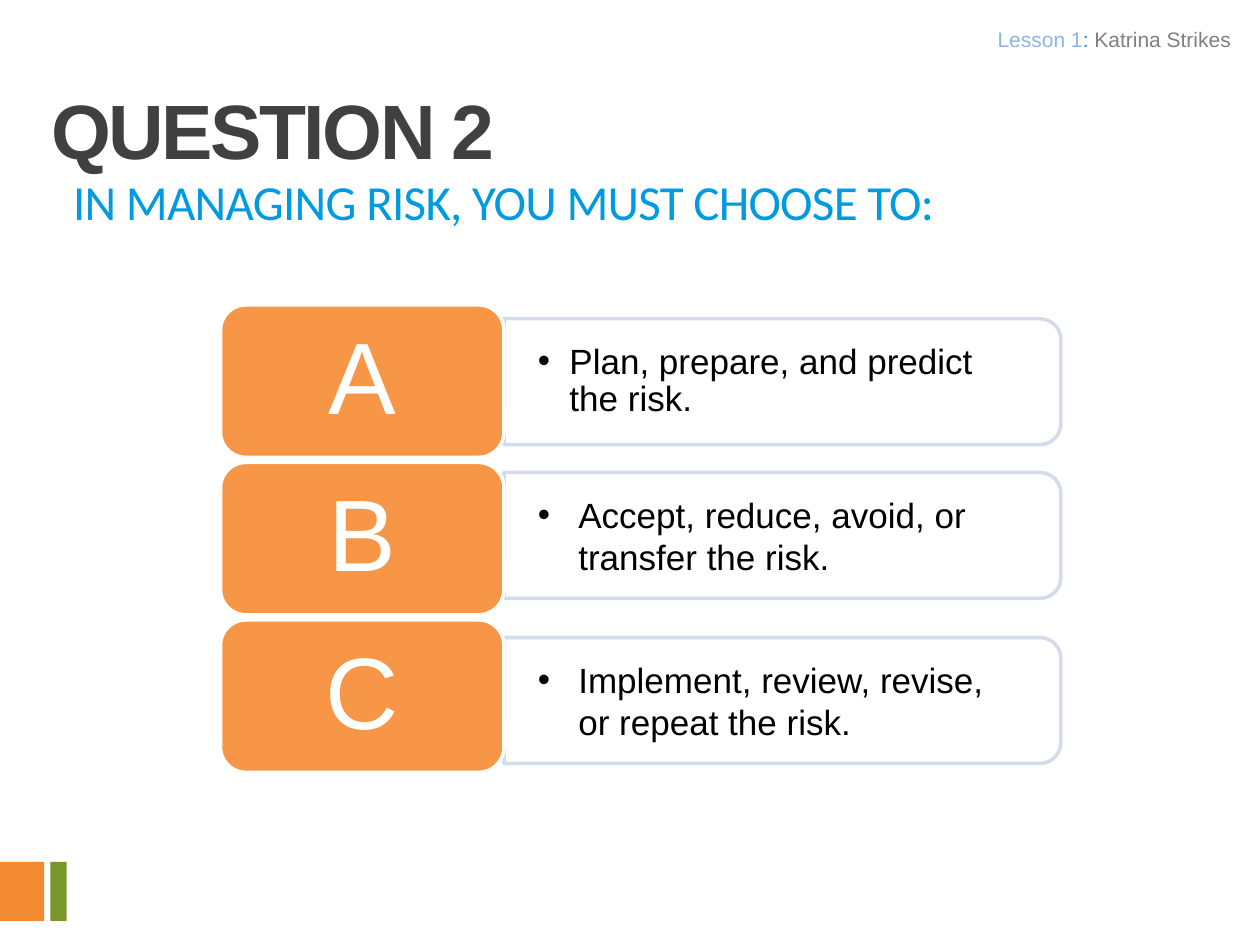
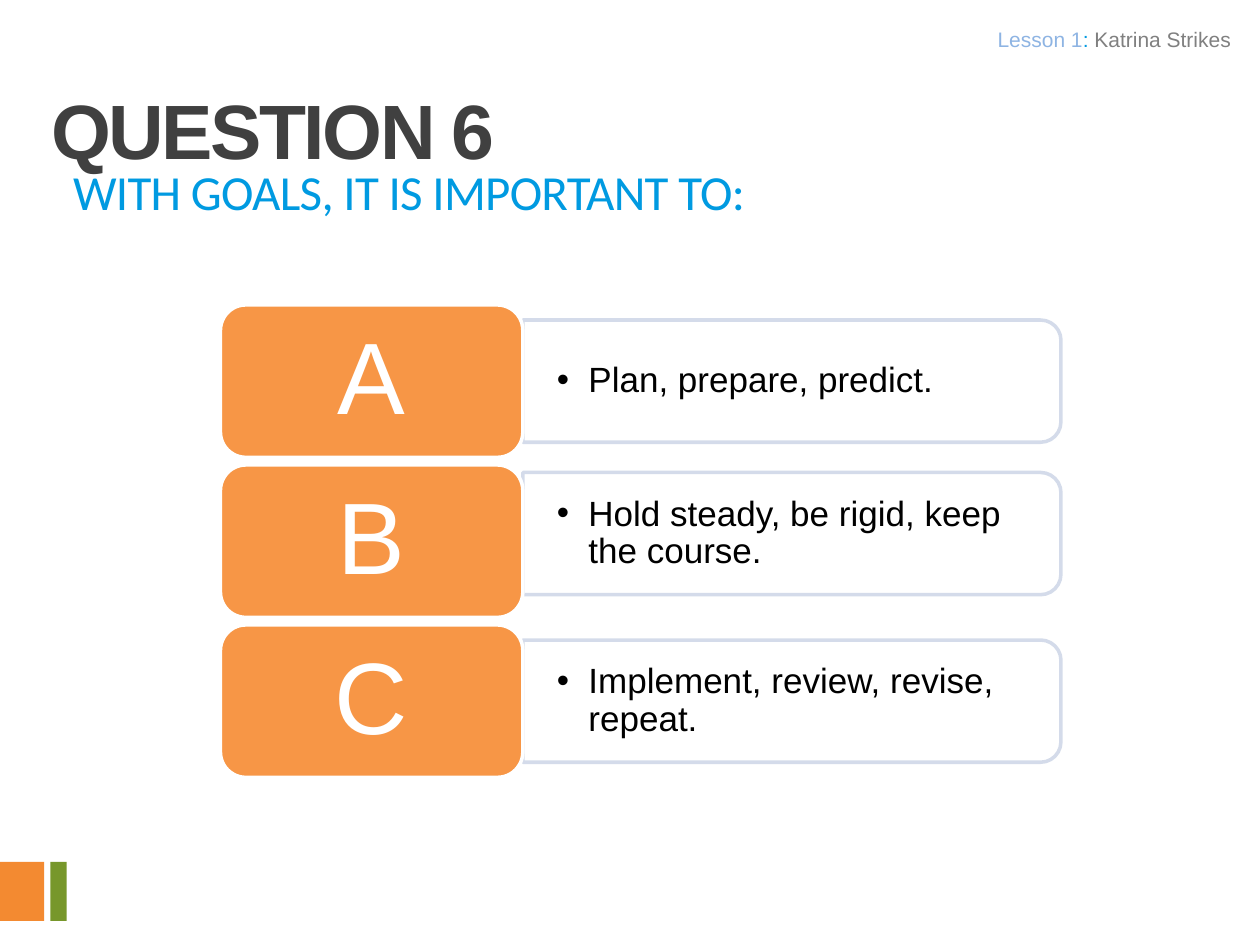
from lxml import etree
from pptx import Presentation
from pptx.dml.color import RGBColor
from pptx.enum.shapes import MSO_SHAPE
from pptx.enum.text import MSO_ANCHOR, MSO_AUTO_SIZE, PP_ALIGN
from pptx.oxml.ns import qn
from pptx.util import Inches, Pt

RECTANGLE = MSO_SHAPE.RECTANGLE
ROUNDED = MSO_SHAPE.ROUNDED_RECTANGLE
ROUNDED_TOP = MSO_SHAPE.ROUND_2_SAME_RECTANGLE
TOP, MIDDLE = MSO_ANCHOR.TOP, MSO_ANCHOR.MIDDLE
LEFT, CENTER, RIGHT = PP_ALIGN.LEFT, PP_ALIGN.CENTER, PP_ALIGN.RIGHT

WHITE = RGBColor(0xFF, 0xFF, 0xFF)
BLACK = RGBColor(0x00, 0x00, 0x00)
DARK_GREY = RGBColor(0x40, 0x40, 0x40)
GREY = RGBColor(0x80, 0x80, 0x80)
BLUE = RGBColor(0x00, 0x9A, 0xE1)
PALE_BLUE = RGBColor(0x8E, 0xB4, 0xE3)
BAR_EDGE = RGBColor(0xD0, 0xD8, 0xE8)
TILE_ORANGE = RGBColor(0xF7, 0x96, 0x46)
BAND_ORANGE = RGBColor(0xF3, 0x8A, 0x31)
BAND_GREEN = RGBColor(0x77, 0x97, 0x2B)

TITLE_FONT = {"name": "Arial", "size": Pt(44), "bold": True}
PROMPT_FONT = {"name": "Calibri", "size": Pt(28)}
LESSON_FONT = {"name": "Arial", "size": Pt(12)}
LETTER_FONT = {"name": "Arial", "size": Pt(58)}
ANSWER_FONT = {"name": "Arial", "size": Pt(20)}

LESSON_PARTS = [("Lesson 1", PALE_BLUE), (": ", BLUE), ("Katrina Strikes", GREY)]
BANDS = [(0, 0.35, BAND_ORANGE), (0.4, 0.13, BAND_GREEN)]

TILE_LEFT, TILE_TOP, TILE_HEIGHT = 1.75, 2.42, 1.21
BAR_RIGHT = 8.42
TEXT_MARGIN = 0.05

# Each answer: text, top of its bar, hanging indent, line spacing
QUESTIONS = [
    {
        "title": "QUESTION 2",
        "prompt": "IN MANAGING RISK, YOU MUST CHOOSE TO:",
        "prompt_box": (0.5, 1.58, 9.33, 0.67),
        "tile_width": 2.25, "tile_pitch": 1.25, "bar_height": 1.0,
        "answers": [
            ("Plan, prepare, and predict the risk.", 2.53, 0.25, 0.9),
            ("Accept, reduce, avoid, or transfer the risk.", 3.75, 0.32, 1.0),
            ("Implement, review, revise, or repeat the risk.", 5.06, 0.32, 1.0),
        ],
    },
    {
        "title": "QUESTION 6",
        "prompt": "WITH GOALS, IT IS IMPORTANT TO:",
        "prompt_box": (0.5, 1.5, 9.5, 1),
        "tile_width": 2.4, "tile_pitch": 1.27, "bar_height": 0.97,
        "answers": [
            ("Plan, prepare, predict.", 2.54, 0.25, 0.9),
            ("Hold steady, be rigid, keep the course.", 3.75, 0.25, 0.9),
            ("Implement, review, revise, repeat.", 5.08, 0.25, 0.9),
        ],
    },
]


def set_frame(shape, horizontal, vertical, anchor=TOP):
    values = {
        "word_wrap": True, "auto_size": MSO_AUTO_SIZE.NONE, "vertical_anchor": anchor,
        "margin_left": Inches(horizontal), "margin_right": Inches(horizontal),
        "margin_top": Inches(vertical), "margin_bottom": Inches(vertical),
    }
    for name, value in values.items():
        setattr(shape.text_frame, name, value)
    return shape.text_frame.paragraphs[0]


def add_run(paragraph, text, font, color, spacing=None):
    run = paragraph.add_run()
    run.text = text
    for name, value in font.items():
        setattr(run.font, name, value)
    run.font.color.rgb = color
    if spacing is not None:
        run.font._element.set("spc", str(round(spacing * 100)))


def add_text_box(slide, box):
    return slide.shapes.add_textbox(*map(Inches, box))


def add_block(slide, kind, box, fill, line=None):
    shape = slide.shapes.add_shape(kind, *map(Inches, box))
    shape.shadow.inherit = False
    shape.fill.solid()
    shape.fill.fore_color.rgb = fill
    if line is None:
        shape.line.fill.background()
    else:
        shape.line.color.rgb = line
        shape.line.width = Pt(2)
    return shape


def set_opacity(shape, percent):
    for color in shape._element.spPr.iter(qn("a:srgbClr")):
        etree.SubElement(color, qn("a:alpha"), val=str(percent * 1000))


def add_bullet(paragraph, indent):
    properties = paragraph._p.get_or_add_pPr()
    properties.set("marL", str(Inches(indent)))
    properties.set("indent", str(-Inches(indent)))
    etree.SubElement(properties, qn("a:buFont"), typeface="Arial")
    etree.SubElement(properties, qn("a:buChar"), char="•")


def add_shared_parts(slide):
    for left, width, color in BANDS:
        add_block(slide, RECTANGLE, (left, 6.84, width, 0.47), color)
    paragraph = set_frame(add_text_box(slide, (4, 0.17, 5.85, 0.32)), 0.08, 0.04)
    paragraph.alignment = RIGHT
    for text, color in LESSON_PARTS:
        add_run(paragraph, text, LESSON_FONT, color)


def set_title(slide, text):
    title = slide.shapes.title
    title.left, title.top, title.width, title.height = map(Inches, (0.33, 0.5, 9.67, 0.6))
    paragraph = set_frame(title, 0.08, 0.07)
    paragraph.alignment = LEFT
    paragraph.line_spacing = Pt(59)
    add_run(paragraph, text, TITLE_FONT, DARK_GREY, -1.5)


def add_prompt(slide, text, box):
    paragraph = set_frame(add_text_box(slide, box), 0.08, 0.07)
    paragraph.line_spacing = Pt(13)
    add_run(paragraph, text, PROMPT_FONT, BLUE, -0.4)


def add_bar(slide, left, top, height):
    """Draw a bar turned by 90 degrees, so that its right end is rounded."""
    width = BAR_RIGHT - left
    shift = (width - height) / 2
    bar = add_block(slide, ROUNDED_TOP, (left + shift, top - shift, height, width),
                    WHITE, BAR_EDGE)
    bar.rotation = 90
    set_opacity(bar, 90)


def add_answer_text(slide, box, text, indent, line_spacing):
    paragraph = set_frame(add_text_box(slide, box), 0.27, 0.14, MIDDLE)
    add_bullet(paragraph, indent)
    paragraph.line_spacing = line_spacing
    add_run(paragraph, text, ANSWER_FONT, BLACK)


def add_tile(slide, letter, box):
    tile = add_block(slide, ROUNDED, box, TILE_ORANGE, WHITE)
    paragraph = set_frame(tile, 0.24, 0.12, MIDDLE)
    paragraph.alignment = CENTER
    paragraph.line_spacing = 0.9
    add_run(paragraph, letter, LETTER_FONT, WHITE)


def add_answers(slide, question):
    tile_width, bar_height = question["tile_width"], question["bar_height"]
    bar_left = TILE_LEFT + tile_width
    text_width = BAR_RIGHT - TEXT_MARGIN - bar_left
    text_height = bar_height - 2 * TEXT_MARGIN
    for row, (letter, answer) in enumerate(zip("ABC", question["answers"])):
        text, bar_top, indent, line_spacing = answer
        add_bar(slide, bar_left, bar_top, bar_height)
        add_answer_text(slide, (bar_left, bar_top + TEXT_MARGIN, text_width, text_height),
                        text, indent, line_spacing)
        tile_top = TILE_TOP + row * question["tile_pitch"]
        add_tile(slide, letter, (TILE_LEFT, tile_top, tile_width, TILE_HEIGHT))


def main():
    presentation = Presentation()
    presentation.slide_width = Inches(10)
    presentation.slide_height = Inches(7.5)
    title_only = presentation.slide_layouts[5]
    for question in QUESTIONS:
        slide = presentation.slides.add_slide(title_only)
        add_shared_parts(slide)
        set_title(slide, question["title"])
        add_prompt(slide, question["prompt"], question["prompt_box"])
        add_answers(slide, question)
    presentation.save("out.pptx")


if __name__ == "__main__":
    main()
